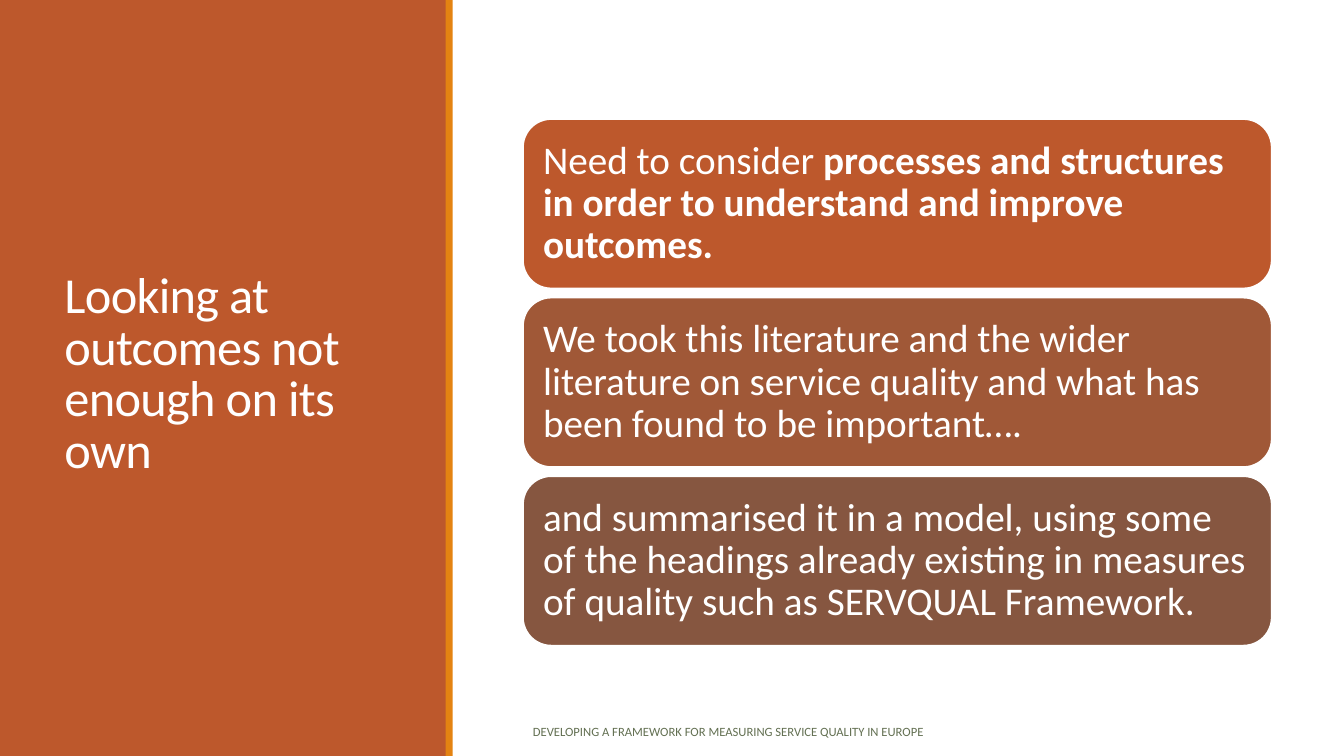
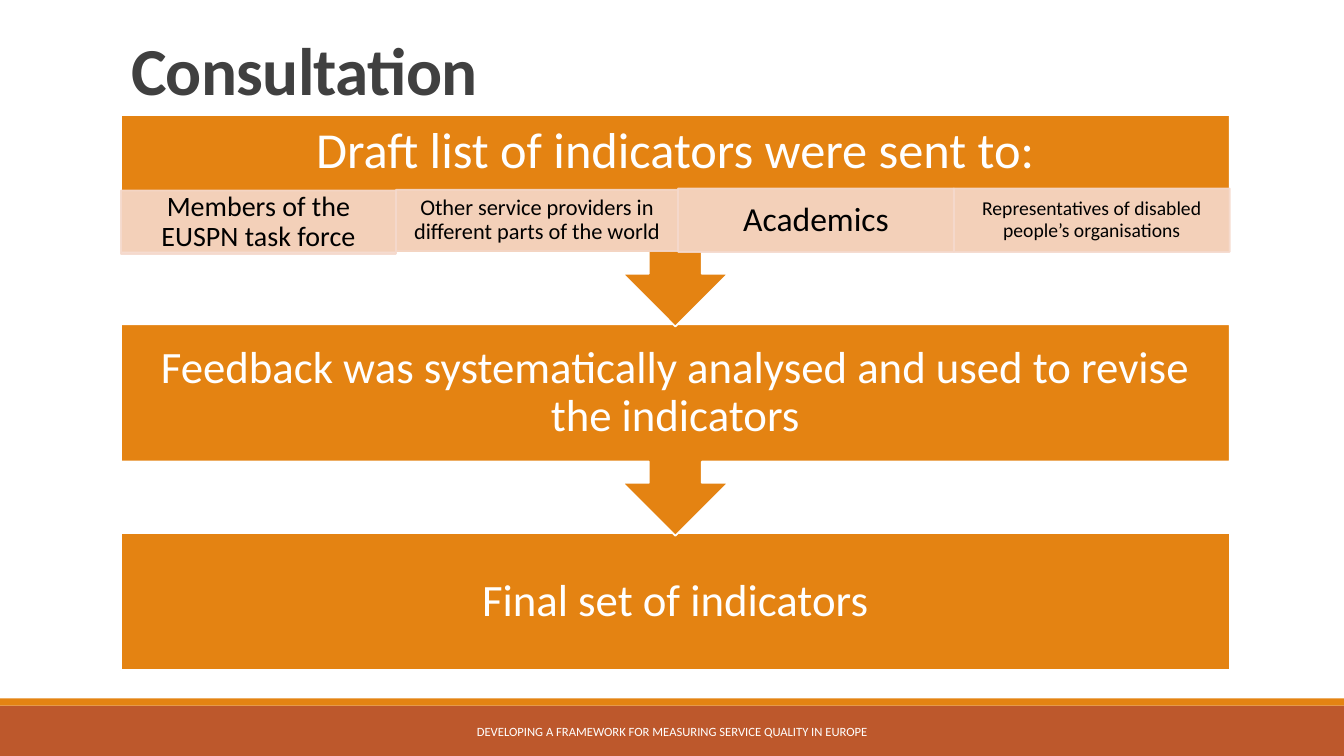
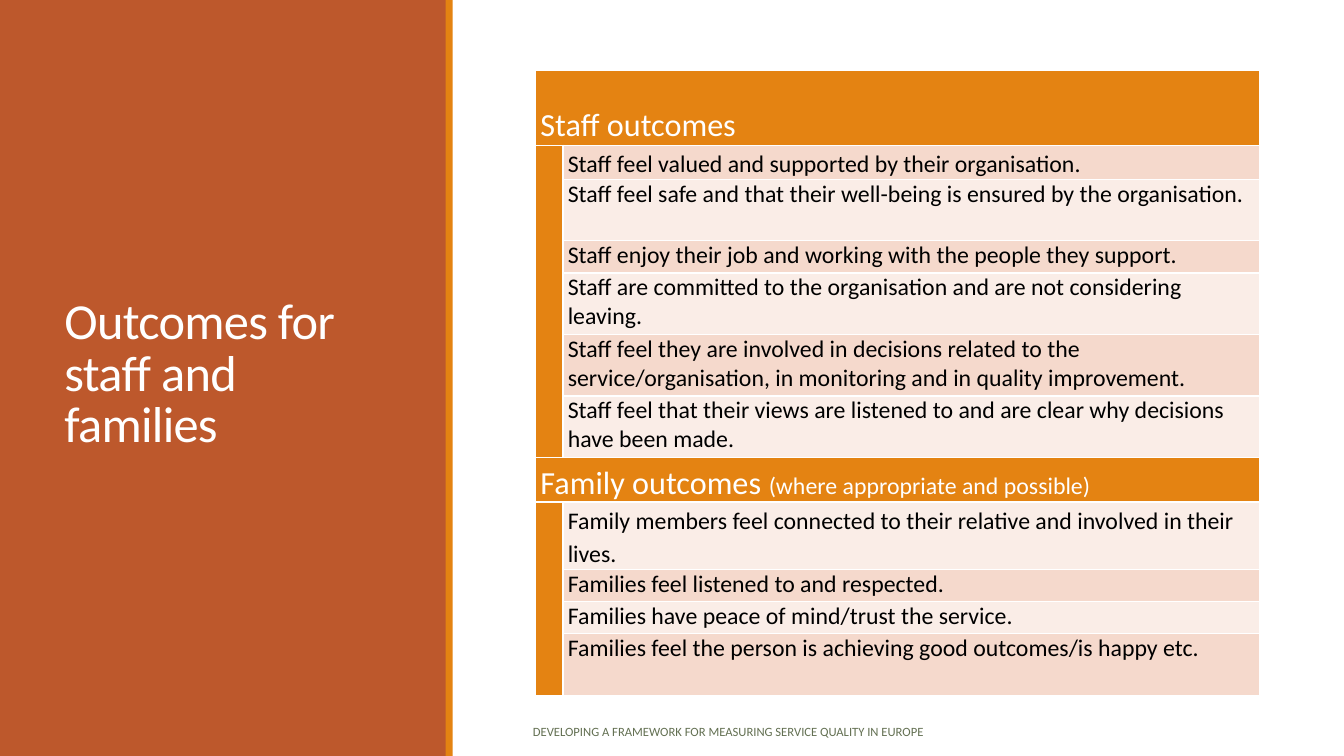
from lxml.etree import SubElement
from pptx import Presentation
from pptx.dml.color import RGBColor
from pptx.enum.shapes import MSO_SHAPE
from pptx.enum.text import MSO_ANCHOR, MSO_AUTO_SIZE, PP_ALIGN
from pptx.oxml import parse_xml
from pptx.oxml.ns import nsdecls, qn
from pptx.util import Cm, Pt

RUST, ORANGE, WHITE, BLACK = "BD582C", "E48312", "FFFFFF", "000000"
PEACH, PALE_PEACH = "F5D9CC", "FAEDE7"
WIDTH, HEIGHT = 33.87, 19.05
FOOTER = "DEVELOPING A FRAMEWORK FOR MEASURING SERVICE QUALITY IN EUROPE"


def write(frame, text, size, color=WHITE, bold=False, align=PP_ALIGN.LEFT,
          spacing=1.0, tracking=None):
    """Add a formatted run to the first paragraph of a text frame."""
    paragraph = frame.paragraphs[0]
    paragraph.alignment = align
    paragraph.line_spacing = spacing
    run = paragraph.add_run()
    run.text = text
    run.font.name = "Calibri"
    run.font.size = Pt(size)
    run.font.bold = bold
    run.font.color.rgb = RGBColor.from_string(color)
    if tracking is not None:
        run._r.get_or_add_rPr().set("spc", str(tracking))


def add_block(slide, kind, box, fill, line=None, alpha=None, margins=(0.3, 0.3, 0.3, 0.3)):
    """Add a flat shape; box and margins (left, top, right, bottom) are in cm."""
    block = slide.shapes.add_shape(kind, *map(Cm, box))
    block.shadow.inherit = False
    block.fill.solid()
    block.fill.fore_color.rgb = RGBColor.from_string(fill)
    if line:
        block.line.color.rgb = RGBColor.from_string(line)
        block.line.width = Pt(1.25)
    else:
        block.line.fill.background()
    if alpha:
        for color in list(block.element.spPr.iter(qn("a:srgbClr"))):
            SubElement(color, qn("a:alpha")).set("val", str(alpha * 1000))
    frame = block.text_frame
    frame.word_wrap = True
    (frame.margin_left, frame.margin_top,
     frame.margin_right, frame.margin_bottom) = map(Cm, margins)
    return block


sidebar_style = {
    "bars": [((0, 0, 11.24, HEIGHT), RUST), ((11.23, 0, 0.18, HEIGHT), ORANGE)],
    "title_box": (1.37, 1.45, 8.56, 16.03),
    "title_anchor": MSO_ANCHOR.MIDDLE,
    "title_format": {"size": 36, "color": WHITE},
    "footer_box": (13.18, 17.93, 14.17, 1.02),
    "footer_format": {"color": "637052"},
}
band_style = {
    "bars": [((0, 17.78, WIDTH, 1.27), RUST), ((0, 17.6, WIDTH, 0.18), ORANGE)],
    "title_box": (3.05, 0.79, 27.94, 2.08),
    "title_anchor": MSO_ANCHOR.BOTTOM,
    "title_format": {"size": 48, "color": "404040", "bold": True},
    "footer_box": (10.24, 17.93, 13.39, 1.02),
    "footer_format": {"color": WHITE, "align": PP_ALIGN.CENTER},
}

deck = Presentation()
deck.slide_width, deck.slide_height = Cm(WIDTH), Cm(HEIGHT)

slides = []
for heading, style in [
    ("Looking at outcomes not enough on its own", sidebar_style),
    ("Consultation", band_style),
    ("Outcomes for staff and families", sidebar_style),
]:
    slide = deck.slides.add_slide(deck.slide_layouts[5])
    slides.append(slide)
    for depth, (box, fill) in enumerate(style["bars"], start=2):
        bar = add_block(slide, MSO_SHAPE.RECTANGLE, box, fill)
        slide.shapes.element.insert(depth, bar.element)  # behind the title

    title = slide.shapes.title
    title.left, title.top, title.width, title.height = map(Cm, style["title_box"])
    title.text_frame.word_wrap = True
    title.text_frame.auto_size = MSO_AUTO_SIZE.NONE
    title.text_frame.vertical_anchor = style["title_anchor"]
    write(title.text_frame, heading, spacing=0.85, tracking=-50, **style["title_format"])

    footer = slide.shapes.add_textbox(*map(Cm, style["footer_box"])).text_frame
    footer.word_wrap = True
    footer.vertical_anchor = MSO_ANCHOR.MIDDLE
    write(footer, FOOTER, 9, **style["footer_format"])

reasons_slide, consultation_slide, outcomes_slide = slides

# Reasons: three stacked cards
reasons = [
    (RUST, "Need to consider ",
     "processes and structures in order to understand and improve outcomes."),
    ("A05837", "We took this literature and the wider literature on service quality "
     "and what has been found to be important….", ""),
    ("865640", "and summarised it in a model, using some of the headings already existing "
     "in measures of quality such as SERVQUAL Framework.", ""),
]
for index, (fill, plain, strong) in enumerate(reasons):
    card = add_block(reasons_slide, MSO_SHAPE.ROUNDED_RECTANGLE,
                     (13.18, 3 + 4.5 * index, 18.87, 4.27), fill, line=WHITE)
    write(card.text_frame, plain, 28, spacing=0.9)
    if strong:
        write(card.text_frame, strong, 28, bold=True, spacing=0.9)

# Consultation: steps from last to first, so that each arrow overlaps the next step
STEP_LEFT, STEP_TOP, STEP_PITCH = 3.05, 2.9, 5.27
steps = [
    (2, MSO_SHAPE.RECTANGLE, 3.45, "Final set of indicators", 32, 0.64),
    (1, MSO_SHAPE.DOWN_ARROW_CALLOUT, 5.33,
     "Feedback was systematically analysed and used to revise the indicators", 32, 0.64),
    (0, MSO_SHAPE.DOWN_ARROW_CALLOUT, 5.33, "Draft list of indicators were sent to:", 36, 2.21),
]
for position, kind, height, text, size, bottom in steps:
    step = add_block(consultation_slide, kind,
                     (STEP_LEFT, STEP_TOP + STEP_PITCH * position, 27.94, height),
                     ORANGE, line=WHITE, margins=(0.64, 0.64, 0.64, bottom))
    write(step.text_frame, text, size, align=PP_ALIGN.CENTER, spacing=0.9)

recipients = [
    ("Members of the EUSPN task force", 20, 4.8, 6.93, 1.6),
    ("Other service providers in different parts of the world", 16, 4.78, 7.11, 1.55),
    ("Academics", 24, 4.75, 6.95, 1.6),
    ("Representatives of disabled people’s organisations", 14, 4.75, 6.95, 1.6),
]
left = STEP_LEFT
for text, size, top, width, height in recipients:
    recipient = add_block(consultation_slide, MSO_SHAPE.RECTANGLE, (left, top, width, height),
                          PEACH, line=PEACH, alpha=90, margins=(0.3, 0.06, 0.3, 0.06))
    write(recipient.text_frame, text, size, BLACK, align=PP_ALIGN.CENTER, spacing=0.9)
    left += width

# Outcomes: table with two groups; each row is (height, text, line spacing)
groups = [
    ("Staff outcomes", "", 1.88, [
        (0.86, "Staff feel valued and supported by their organisation.", 1.15),
        (1.55, "Staff feel safe and that their well-being is ensured by the organisation.", 1),
        (0.81, "Staff enjoy their job and working with the people they support.", 1),
        (1.55, "Staff are committed to the organisation and are not considering leaving.", 1),
        (1.55, "Staff feel they are involved in decisions related to the service/organisation, "
               "in monitoring and in quality improvement.", 1),
        (1.55, "Staff feel that their views are listened to and are clear why decisions "
               "have been made.", 1),
    ]),
    ("Family outcomes ", "(where appropriate and possible)", 1.12, [
        (1.7, "Family members feel connected to their relative and involved in their lives.", 1.15),
        (0.81, "Families feel listened to and respected.", 1),
        (0.81, "Families have peace of mind/trust the service.", 1),
        (1.55, "Families feel the person is achieving good outcomes/is happy etc.", 1),
    ]),
]
row_count = sum(1 + len(outcomes) for *_, outcomes in groups)
table = outcomes_slide.shapes.add_table(
    row_count, 2, Cm(13.5), Cm(1.78), Cm(18.24), Cm(15.74)).table
table.first_row = table.horz_banding = False
table.columns[0].width, table.columns[1].width = Cm(0.69), Cm(17.55)

for row in range(row_count):
    for column in range(2):
        cell = table.cell(row, column)
        cell.margin_left = cell.margin_right = Cm(0.12)
        cell.margin_top = cell.margin_bottom = 0
        cell.fill.solid()
        cell.fill.fore_color.rgb = RGBColor.from_string(ORANGE)
        for order, side in enumerate("LRTB"):
            cell._tc.get_or_add_tcPr().insert(order, parse_xml(
                f'<a:ln{side} w="12700" {nsdecls("a")}><a:solidFill>'
                f'<a:srgbClr val="{WHITE}"/></a:solidFill></a:ln{side}>'))

row = 0
for heading, remark, heading_height, outcomes in groups:
    table.rows[row].height = Cm(heading_height)
    header = table.cell(row, 0)
    header.merge(table.cell(row, 1))
    header.vertical_anchor = MSO_ANCHOR.BOTTOM
    write(header.text_frame, heading, 23, spacing=1.15)
    if remark:
        write(header.text_frame, remark, 17, spacing=1.15)
    table.cell(row + 1, 0).merge(table.cell(row + len(outcomes), 0))
    for row, (height, text, spacing) in enumerate(outcomes, start=row + 1):
        table.rows[row].height = Cm(height)
        cell = table.cell(row, 1)
        cell.fill.fore_color.rgb = RGBColor.from_string(PEACH if row % 2 else PALE_PEACH)
        write(cell.text_frame, text, 17, BLACK, spacing=spacing)
    row += 1

deck.save("out.pptx")
